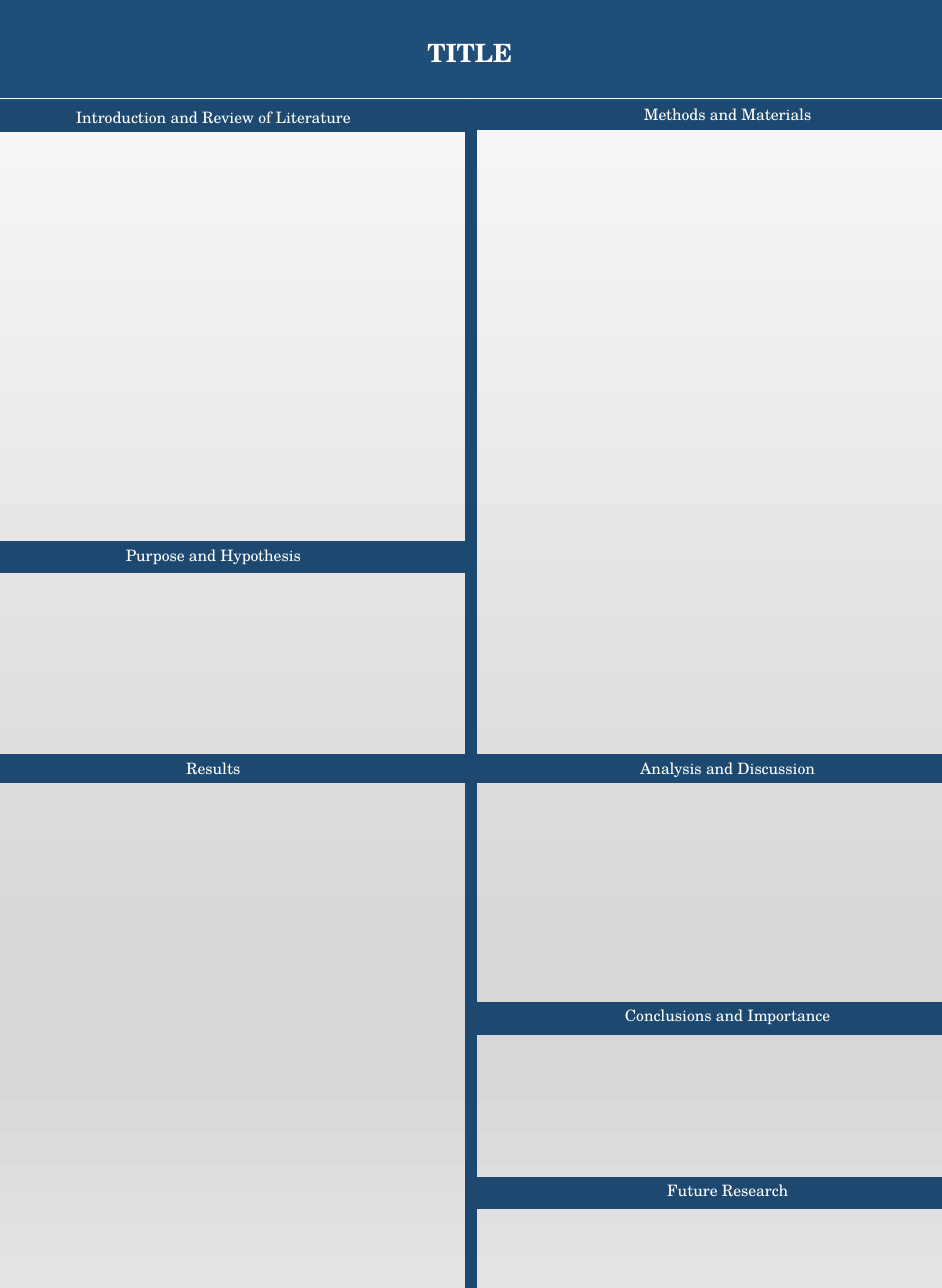
from pptx import Presentation
from pptx import util as u
from pptx.dml.color import RGBColor
from pptx.enum import shapes, text
from pptx.oxml.ns import qn
from lxml import etree

Pt = u.Pt

# Content: heading, bar top, bar height, label top, label width (points)
TITLE = "TITLE"
LEFT_SECTIONS = [
    ("Introduction and Review of Literature", 59.8, 18, 60.5, 192),
    ("Purpose and Hypothesis", 321.1, 18, 319.7, 186),
    ("Results", 447.1, 16.6, 446.4, 97),
]
RIGHT_SECTIONS = [
    ("Methods and Materials", 58.3, 18, 58.3, 203),
    ("Analysis and Discussion", 447.1, 16.6, 446.4, 126),
    ("Conclusions and Importance", 594, 18.7, 592.6, 176),
    ("Future Research", 697.7, 18, 696.2, 176),
]

THEME = {
    "font": "TeX Gyre Schola",
    "title_size": 14.9,
    "heading_size": 9.3,
    "text": "FFFFFF",
    "header": "1F4E79",
    "bar": "1D4971",
    "divider": "1C4971",
    "rule": "FFFFFF",
    "background": [(0, "FAFAFA"), (74, "D7D7D7"), (83, "D7D7D7"), (100, "E4E4E4")],
}

# Layout
PAGE_W, PAGE_H = 558, 763.2
MIDDLE = PAGE_W / 2
HEADER_H = 59.8
RULE_Y = 58.5
LABEL_H = 18.7
COLUMNS = [(0, 126.4, LEFT_SECTIONS), (MIDDLE, 431, RIGHT_SECTIONS)]


def rgb(name):
    return RGBColor.from_string(THEME[name])


def add_block(slide, kind, left, top, width, height, color):
    block = slide.shapes.add_shape(kind, Pt(left), Pt(top), Pt(width), Pt(height))
    block.shadow.inherit = False
    block.fill.solid()
    block.fill.fore_color.rgb = rgb(color)
    block.line.color.rgb = rgb(color)
    block.line.width = Pt(1)
    return block


def add_line(slide, x1, y1, x2, y2, color, weight):
    line = slide.shapes.add_connector(
        shapes.MSO_CONNECTOR.STRAIGHT, Pt(x1), Pt(y1), Pt(x2), Pt(y2))
    line.line.color.rgb = rgb(color)
    line.line.width = Pt(weight)
    etree.SubElement(line._element.spPr, qn("a:effectLst"))


def write(frame, words, size, bold=False):
    frame.word_wrap = True
    frame.auto_size = text.MSO_AUTO_SIZE.NONE
    paragraph = frame.paragraphs[0]
    paragraph.alignment = text.PP_ALIGN.CENTER
    run = paragraph.add_run()
    run.text = words
    run.font.name = THEME["font"]
    run.font.size = Pt(THEME[size])
    run.font.bold = bold
    run.font.color.rgb = rgb("text")


def paint_background(slide):
    fill = slide.background.fill
    fill.gradient()
    fill.gradient_angle = 270
    stops = slide.element.find(".//" + qn("a:gsLst"))
    for stop in list(stops):
        stops.remove(stop)
    for position, color in THEME["background"]:
        stop = etree.SubElement(stops, qn("a:gs"), pos=str(position * 1000))
        etree.SubElement(stop, qn("a:srgbClr"), val=color)


def main():
    poster = Presentation()
    poster.slide_width, poster.slide_height = Pt(PAGE_W), Pt(PAGE_H)
    slide = poster.slides.add_slide(poster.slide_layouts[5])
    paint_background(slide)

    # Lower column divider, behind the bars
    add_line(slide, MIDDLE, 423.4, MIDDLE, PAGE_H, "divider", 7)

    # Section bars
    for left, _, sections in COLUMNS:
        for _, top, height, _, _ in sections:
            add_block(slide, shapes.MSO_SHAPE.RECTANGLE,
                      left, top, MIDDLE, height, "bar")

    # Header with the title in front
    header = add_block(slide, shapes.MSO_SHAPE.ROUNDED_RECTANGLE,
                       0, 0, PAGE_W, HEADER_H, "header")
    header.adjustments[0] = 0
    title = slide.shapes.title
    title.left, title.top, title.width, title.height = (
        Pt(69.1), Pt(18.7), Pt(418.3), Pt(56.2))
    title.text_frame.vertical_anchor = text.MSO_ANCHOR.TOP
    write(title.text_frame, TITLE, "title_size", bold=True)
    header._element.addnext(title._element)

    # Section headings, centred on each column's axis
    for _, axis, sections in COLUMNS:
        for heading, _, _, top, width in sections:
            label = slide.shapes.add_textbox(
                Pt(axis - width / 2), Pt(top), Pt(width), Pt(LABEL_H))
            write(label.text_frame, heading, "heading_size")

    # Upper column divider and the rule under the header
    add_line(slide, MIDDLE, HEADER_H, MIDDLE, 452.9, "divider", 7)
    add_line(slide, 0, RULE_Y, PAGE_W, RULE_Y, "rule", 0.5)

    poster.save("out.pptx")


if __name__ == "__main__":
    main()
